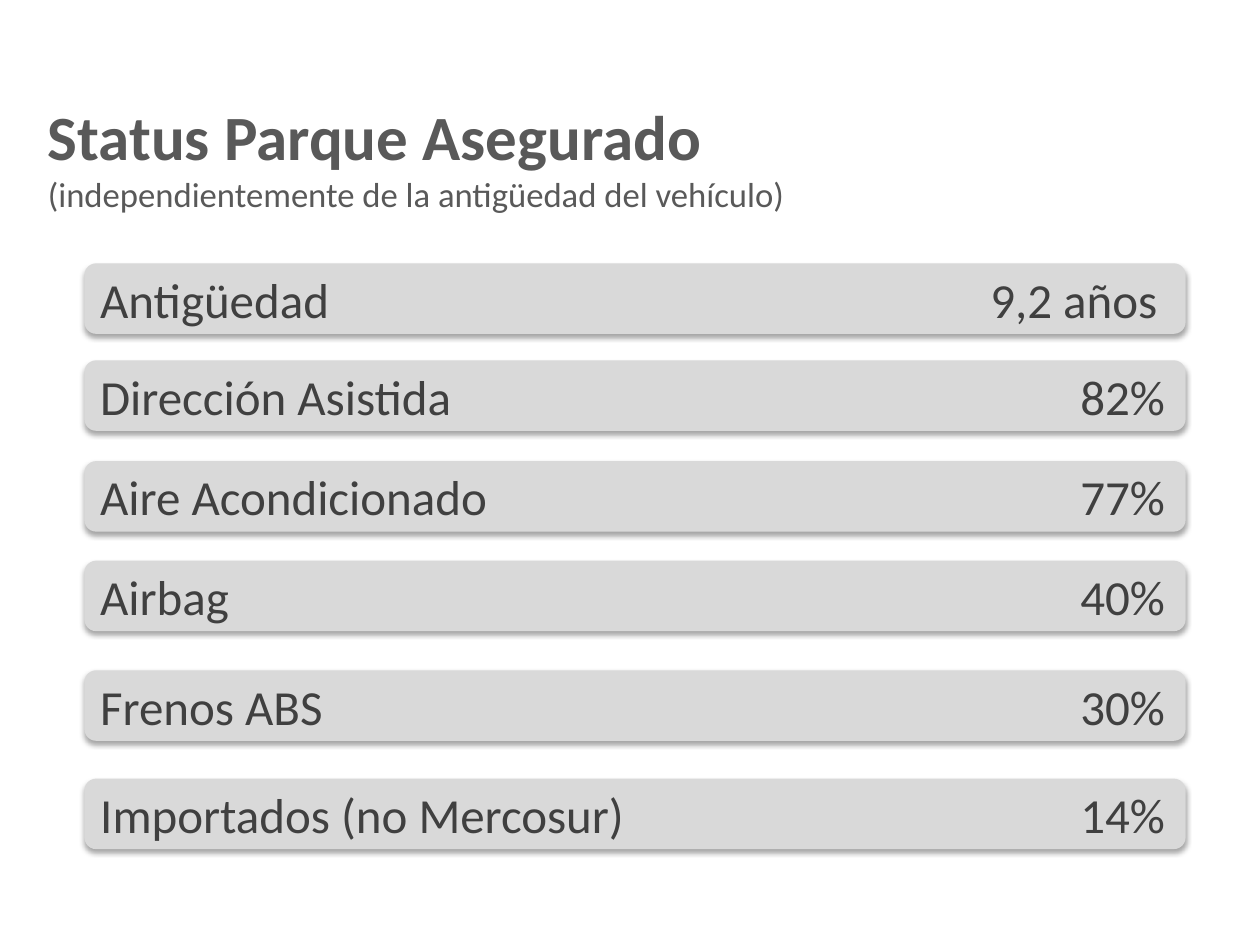
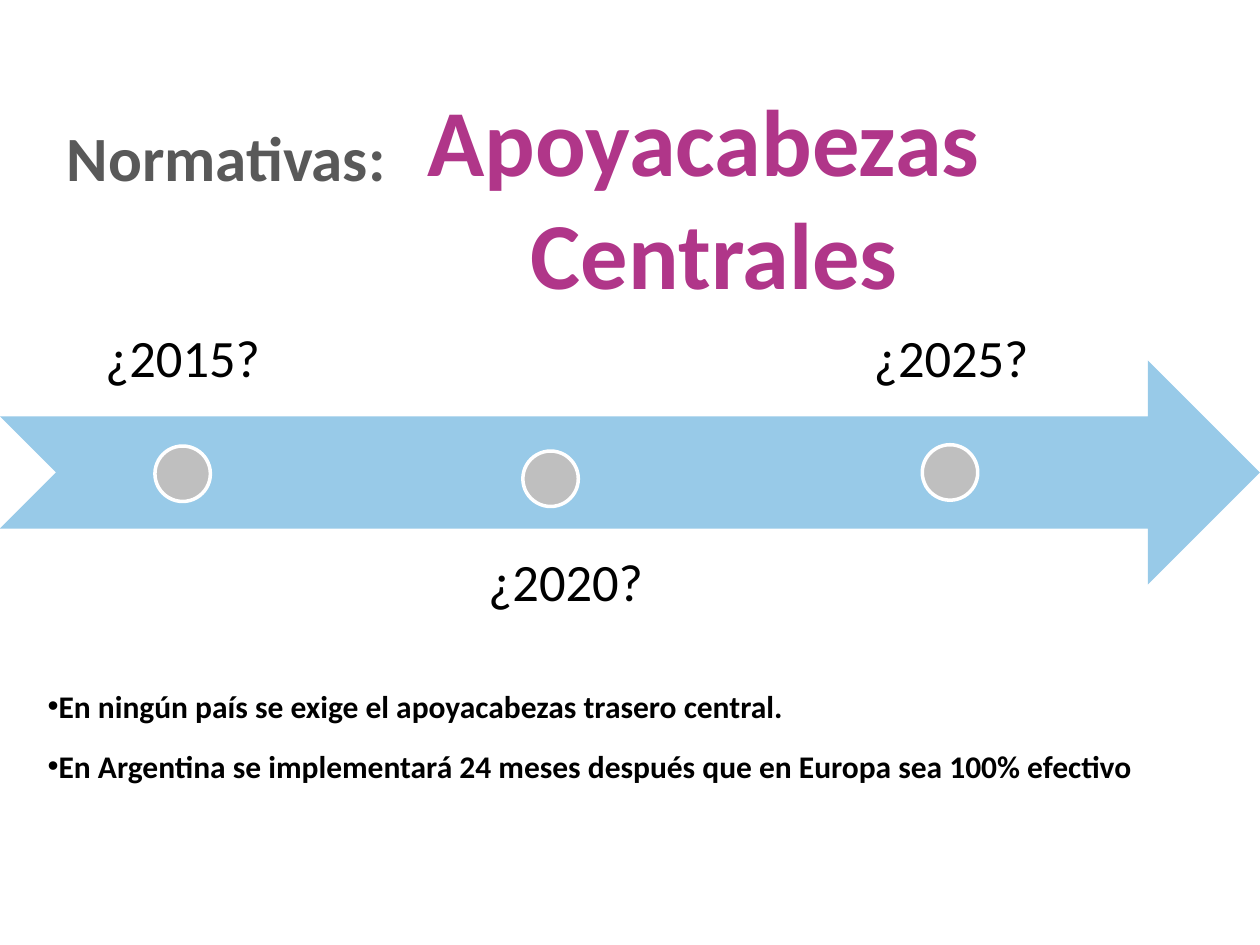
from dataclasses import dataclass

from lxml import etree
from pptx import Presentation
from pptx.dml.color import RGBColor
from pptx.enum import shapes, text
from pptx.oxml import ns
from pptx.util import Inches, Pt


@dataclass(frozen=True)
class Theme:
    font: str = "Calibri"
    title: str = "595959"
    accent: str = "B03689"
    bar: str = "D9D9D9"
    bar_text: str = "404040"
    arrow: str = "98CAE8"
    dot: str = "BFBFBF"
    black: str = "000000"
    white: str = "FFFFFF"
    title_size: float = 36
    subtitle_size: float = 19.8
    bar_size: float = 28
    year_size: float = 30
    topic_size: float = 54
    note_size: float = 18


T = Theme()
MSO = shapes.MSO_SHAPE
ALIGN = text.PP_ALIGN
ANCHOR = text.MSO_ANCHOR


def add_run(p, words, size, color, bold=False):
    r = p.add_run()
    r.text = words
    r.font.name, r.font.size, r.font.bold = T.font, Pt(size), bold
    r.font.color.rgb = RGBColor.from_string(color)


def add_plain_shape(s, kind, box, fill):
    """Add a filled preset shape without line or shadow."""
    sp = s.shapes.add_shape(kind, *map(Inches, box))
    sp.shadow.inherit = False
    sp.fill.solid()
    sp.fill.fore_color.rgb = RGBColor.from_string(fill)
    sp.line.fill.background()
    return sp


prs = Presentation()
prs.slide_width, prs.slide_height = Inches(10), Inches(7.5)

# Title on both slides
slides = []
for words, left, width in [("Status Parque Asegurado", 0.28, 9.07),
                           ("Normativas:", 0.43, 4.09)]:
    s = prs.slides.add_slide(prs.slide_layouts[5])
    sp = s.shapes.title
    sp.left, sp.top, sp.width, sp.height = map(Inches, (left, 0.92, width, 0.64))
    tf = sp.text_frame
    tf.auto_size = text.MSO_AUTO_SIZE.NONE
    tf.vertical_anchor = ANCHOR.MIDDLE
    p = tf.paragraphs[0]
    p.alignment = ALIGN.LEFT
    add_run(p, words, T.title_size, T.title, True)
    slides.append(s)
status, rules = slides

# Slide 1: subtitle and one bar for each indicator
p = status.shapes.title.text_frame.paragraphs[0]
p.add_line_break()
add_run(p, "(independientemente de la antigüedad del vehículo)",
        T.subtitle_size, T.title)

SHADOW = f"""<a:outerShdw xmlns:a="{ns.nsuri('a')}" blurRad="{Pt(3.1)}"
 dist="{Pt(1.8)}" dir="5400000" rotWithShape="0"><a:srgbClr val="{T.black}">
<a:alpha val="35000"/></a:srgbClr></a:outerShdw>"""

indicators = [
    (2.09, "Antigüedad", "9,2 años", 8.39),
    (2.86, "Dirección Asistida", "82%", 8.45),
    (3.66, "Aire Acondicionado", "77%", 8.45),
    (4.45, "Airbag", "40%", 8.45),
    (5.32, "Frenos ABS", "30%", 8.45),
    (6.18, "Importados (no Mercosur)", "14%", 8.45),
]
for top, label, value, value_tab in indicators:
    sp = add_plain_shape(status, MSO.ROUNDED_RECTANGLE, (0.67, top, 8.74, 0.56), T.bar)
    sp._element.spPr.find(ns.qn("a:effectLst")).append(etree.fromstring(SHADOW))
    tf = sp.text_frame
    tf.vertical_anchor = ANCHOR.MIDDLE
    p = tf.paragraphs[0]
    p.alignment = ALIGN.LEFT
    tabs = etree.SubElement(p._p.get_or_add_pPr(), ns.qn("a:tabLst"))
    etree.SubElement(tabs, ns.qn("a:tab"), pos=str(Inches(value_tab)), algn="r")
    add_run(p, f"{label}\t{value}", T.bar_size, T.bar_text)

# Slide 2: timeline arrow with years
add_plain_shape(rules, MSO.NOTCHED_RIGHT_ARROW, (0, 2.86, 10, 1.78), T.arrow)
milestones = [
    ("¿2015?", 0, 1.53, ANCHOR.BOTTOM, 1.23, 3.54),
    ("¿2020?", 3.04, 4.19, ANCHOR.TOP, 4.15, 3.58),
    ("¿2025?", 6.1, 1.53, ANCHOR.BOTTOM, 7.32, 3.53),
]
for year, left, top, anchor, dot_left, dot_top in milestones:
    sp = rules.shapes.add_textbox(*map(Inches, (left, top, 2.9, 1.78)))
    tf = sp.text_frame
    tf.word_wrap = True
    tf.vertical_anchor = anchor
    tf.margin_left = tf.margin_right = tf.margin_top = tf.margin_bottom = Inches(0.23)
    p = tf.paragraphs[0]
    p.alignment = ALIGN.CENTER
    p.line_spacing = 0.9
    add_run(p, year, T.year_size, T.black)

    dot = add_plain_shape(rules, MSO.OVAL, (dot_left, dot_top, 0.44, 0.44), T.dot)
    dot.line.color.rgb = RGBColor.from_string(T.white)
    dot.line.width = Pt(2)

# Slide 2: notes under the timeline
tf = rules.shapes.add_textbox(*map(Inches, (0.28, 5.4, 9.45, 0.89))).text_frame
tf.word_wrap = True
notes = [
    "En ningún país se exige el apoyacabezas trasero central.",
    "En Argentina se implementará 24 meses después que en Europa sea 100% efectivo",
]
for i, note in enumerate(notes):
    p = tf.add_paragraph() if i else tf.paragraphs[0]
    pPr = p._p.get_or_add_pPr()
    etree.SubElement(pPr, ns.qn("a:buFont"), typeface="Arial")
    etree.SubElement(pPr, ns.qn("a:buChar"), char="•")
    if i:
        p.space_before = Pt(12.8)
    add_run(p, note, T.note_size, T.black, True)

# Slide 2: topic beside the title
tf = rules.shapes.add_textbox(*map(Inches, (3.27, 0.6, 4.8, 1.92))).text_frame
tf.word_wrap = False
for i, words in enumerate(["Apoyacabezas ", "Centrales"]):
    p = tf.add_paragraph() if i else tf.paragraphs[0]
    p.alignment = ALIGN.CENTER
    add_run(p, words, T.topic_size, T.accent, True)

prs.save("out.pptx")
